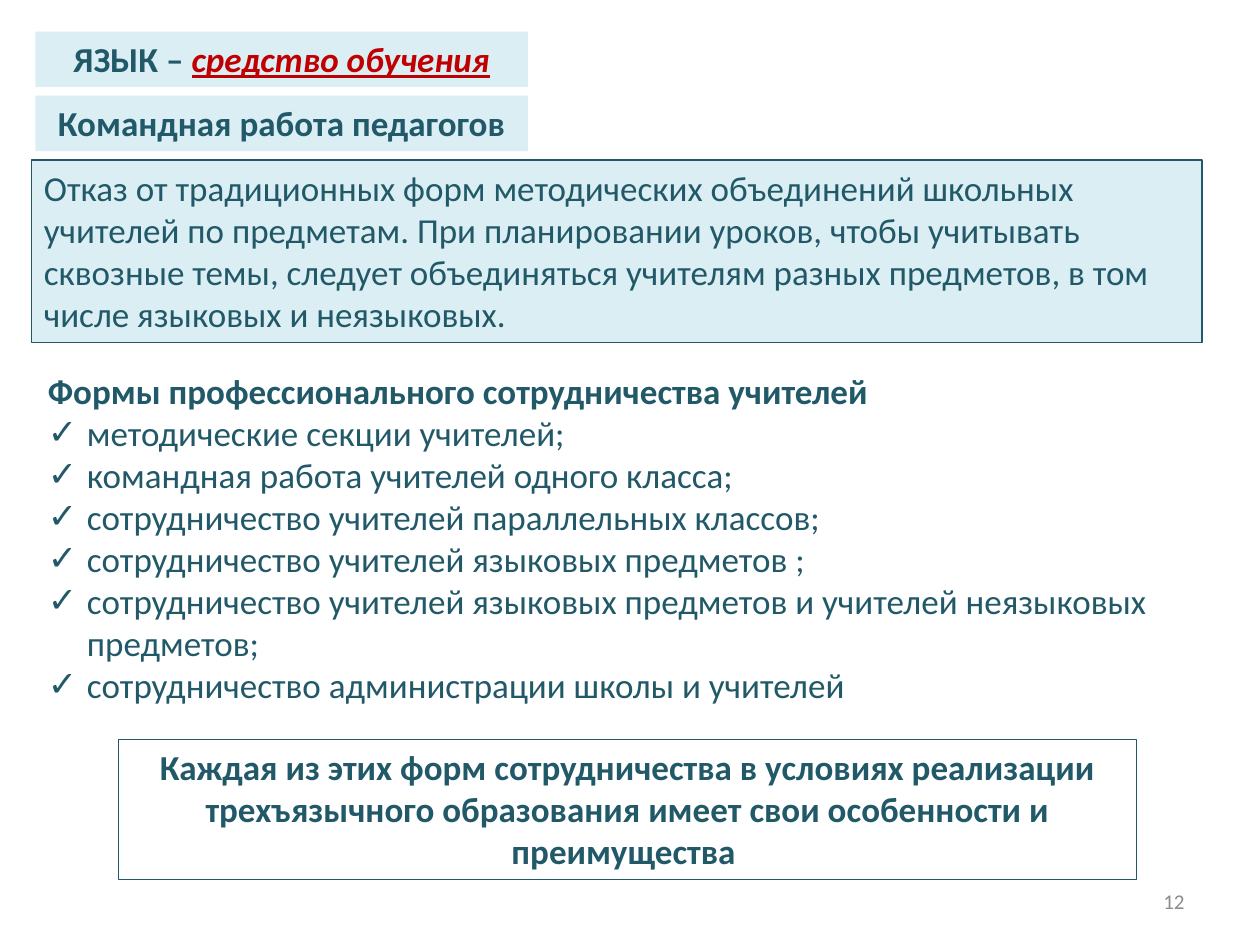
"""Build the slide on teamwork of teachers in language education."""
from lxml.etree import SubElement
from pptx import Presentation
from pptx.dml.color import RGBColor
from pptx.enum.shapes import MSO_SHAPE as Shape
from pptx.enum.text import MSO_ANCHOR as Anchor, MSO_AUTO_SIZE as AutoSize, PP_ALIGN as Align
from pptx.oxml.ns import qn
from pptx.util import Inches, Pt

TEAL, PALE, RED, GRAY = "215968", "DBEEF4", "C00000", "8C8C8C"


def rgb(color):
    return RGBColor.from_string(color)


def style(box, place, align=Align.LEFT, bold=False, size=20, color=TEAL, anchor=Anchor.TOP):
    box.left, box.top, box.width, box.height = map(Inches, place)
    frame = box.text_frame
    frame.word_wrap = True
    frame.auto_size = AutoSize.NONE
    frame.vertical_anchor = anchor
    for paragraph in frame.paragraphs:
        paragraph.alignment = align
        paragraph.space_before = Pt(0)
        for run in paragraph.runs:
            run.font.name = "Calibri"
            run.font.size = Pt(size)
            run.font.bold = bold
            run.font.color.rgb = rgb(color)


prs = Presentation()
prs.slide_width, prs.slide_height = Inches(10), Inches(7.5)
slide = prs.slides.add_slide(prs.slide_layouts[1])

title = slide.shapes.title
title.text_frame.text = "ЯЗЫК – "
emphasis = title.text_frame.paragraphs[0].add_run()
emphasis.text = "средство обучения"
style(title, (0.28, 0.25, 3.91, 0.44), Align.CENTER, bold=True)
title.fill.solid()
title.fill.fore_color.rgb = rgb(PALE)
emphasis.font.italic = emphasis.font.underline = True
emphasis.font.color.rgb = rgb(RED)

panels = [
    ("Командная работа педагогов",
     (0.28, 0.76, 3.91, 0.44), Align.CENTER, True, PALE, False),
    ("Отказ от традиционных форм методических объединений школьных учителей по предметам. "
     "При планировании уроков, чтобы учитывать сквозные темы, следует объединяться учителям "
     "разных предметов, в том числе языковых и неязыковых.",
     (0.25, 1.27, 9.29, 1.45), Align.LEFT, False, PALE, True),
    ("Каждая из этих форм сотрудничества в условиях реализации трехъязычного образования "
     "имеет свои особенности и преимущества ",
     (0.94, 5.87, 8.08, 1.11), Align.CENTER, True, None, True),
]
for text, place, align, bold, fill, outlined in panels:
    panel = slide.shapes.add_shape(Shape.RECTANGLE, *map(Inches, place))
    panel.shadow.inherit = False
    panel.text_frame.text = text
    style(panel, place, align, bold)
    if fill:
        panel.fill.solid()
        panel.fill.fore_color.rgb = rgb(fill)
    else:
        panel.fill.background()
    if outlined:
        panel.line.color.rgb = rgb(TEAL)
        panel.line.width = Pt(0.75)
    else:
        panel.line.fill.background()

forms = slide.placeholders[1]
forms.text_frame.text = "\n".join([
    "Формы профессионального сотрудничества учителей",
    "методические секции учителей;",
    "командная работа учителей одного класса;",
    "сотрудничество учителей параллельных классов;",
    "сотрудничество учителей языковых предметов ;",
    "сотрудничество учителей языковых предметов и учителей неязыковых предметов;",
    "сотрудничество администрации школы и учителей",
])
style(forms, (0.28, 2.88, 9.29, 2.79))
heading, *items = forms.text_frame.paragraphs
heading.runs[0].font.bold = True
heading_props = heading._p.get_or_add_pPr()
heading_props.set("marL", "0")
heading_props.set("indent", "0")
SubElement(heading_props, qn("a:buNone"))
for item in items:
    item_props = item._p.get_or_add_pPr()
    item_props.set("marL", str(Inches(0.31)))
    item_props.set("indent", str(-Inches(0.31)))
    SubElement(item_props, qn("a:buChar")).set("char", "✓")

number_place = (7.17, 6.95, 2.33, 0.4)
page_number = slide.shapes.add_textbox(*map(Inches, number_place))
page_number.text_frame.text = "12"
style(page_number, number_place, Align.RIGHT, size=12, color=GRAY, anchor=Anchor.MIDDLE)

prs.save("out.pptx")
